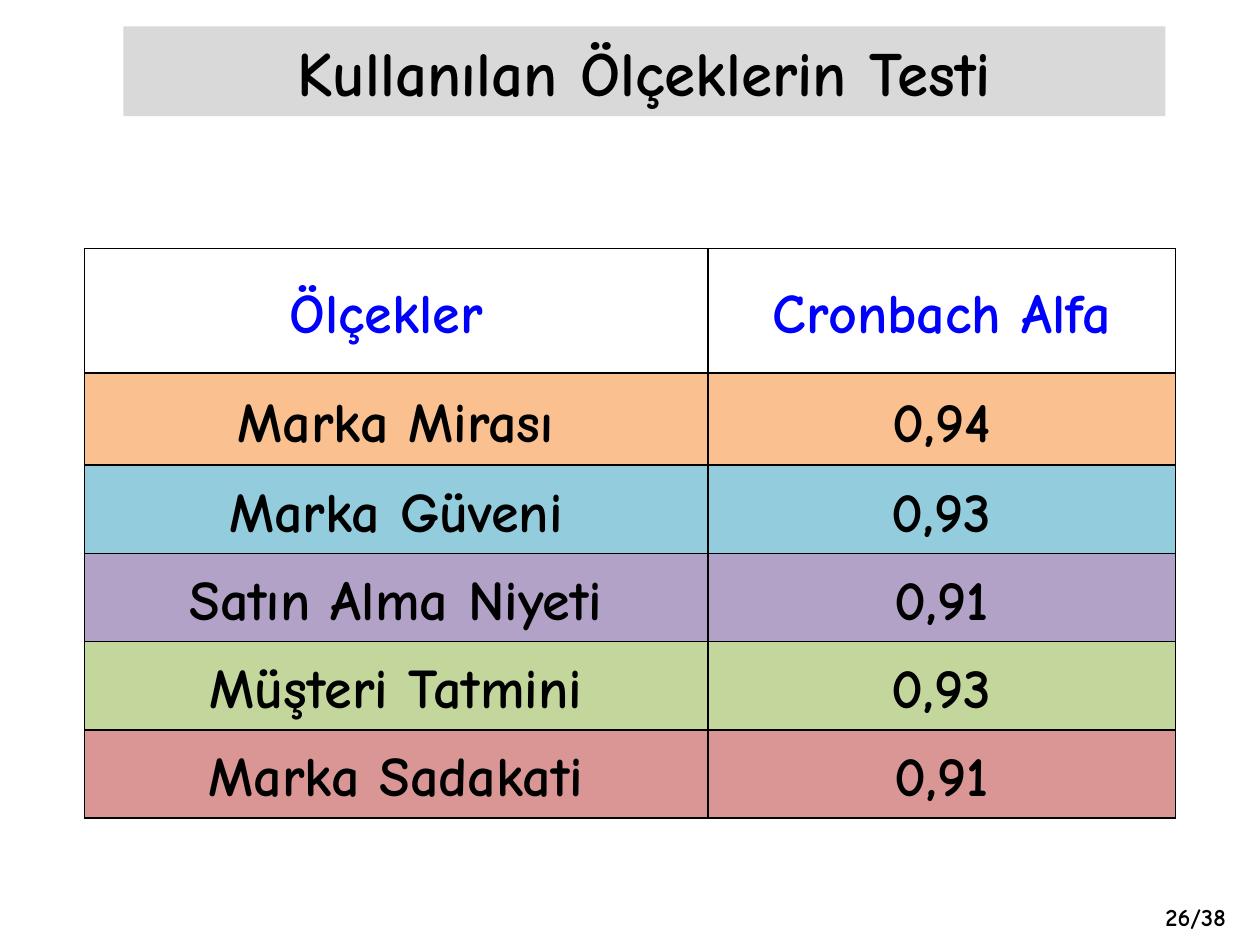
from pptx import Presentation
from pptx.dml.color import RGBColor
from pptx.enum.text import MSO_ANCHOR, MSO_AUTO_SIZE, PP_ALIGN
from pptx.oxml import parse_xml
from pptx.oxml.ns import nsdecls
from pptx.util import Inches, Pt

MIDDLE = MSO_ANCHOR.MIDDLE
CENTER = PP_ALIGN.CENTER
NO_FIT = MSO_AUTO_SIZE.NONE

THEME = {
    "font": "Comic Neue",
    "ink": "000000",
    "head": "0000FF",
    "paper": "FFFFFF",
    "band": "D9D9D9",
    "title": 36,
    "cell": 32,
    "page": 14,
}

ROWS = [
    ("Ölçekler ", "Cronbach Alfa", THEME["paper"]),
    ("Marka Mirası", "0,94", "FAC090"),
    ("Marka Güveni", "0,93", "93CDDD"),
    ("Satın Alma Niyeti", "0,91", "B3A2C7"),
    ("Müşteri Tatmini", "0,93", "C3D69B"),
    ("Marka Sadakati", "0,91", "D99694"),
]


def write(frame, text, size, color=THEME["ink"], lines=1.0):
    """Put one centred bold paragraph into a text frame."""
    para = frame.paragraphs[0]
    para.alignment = CENTER
    para.line_spacing = lines
    run = para.add_run()
    run.text = text
    run.font.name = THEME["font"]
    run.font.size = Pt(size)
    run.font.bold = True
    run.font.color.rgb = RGBColor.from_string(color)


def edge(cell):
    """Draw a thin line on all four sides of a cell."""
    props = cell._tc.get_or_add_tcPr()
    for spot, side in enumerate(("lnL", "lnR", "lnT", "lnB")):
        props.insert(spot, parse_xml(
            f'<a:{side} {nsdecls("a")} w="{Pt(1)}"><a:solidFill>'
            f'<a:srgbClr val="{THEME["ink"]}"/></a:solidFill></a:{side}>'))


deck = Presentation()
deck.slide_width, deck.slide_height = Inches(10), Inches(7.5)
wide, high = deck.slide_width, deck.slide_height
slide = deck.slides.add_slide(deck.slide_layouts[5])

# Title band
title = slide.shapes.title
title.left, title.top = int(wide * 0.098), int(high * 0.028)
title.width, title.height = int(wide * 0.827), int(high * 0.095)
title._element.spPr.append(parse_xml(
    f'<a:prstGeom {nsdecls("a")} prst="flowChartAlternateProcess">'
    '<a:avLst/></a:prstGeom>'))
title.fill.solid()
title.fill.fore_color.rgb = RGBColor.from_string(THEME["band"])
title.text_frame.auto_size = NO_FIT
title.text_frame.vertical_anchor = MIDDLE
write(title.text_frame, "Kullanılan Ölçeklerin Testi", THEME["title"])

# Table of scales: columns 4 to 3, a tall head row, then even rows
span = int(wide * 0.866)
tall = [Inches(0.99), Inches(0.73)] + [Inches(0.7)] * 4
table = slide.shapes.add_table(
    len(ROWS), 2, (wide - span) // 2, int(high * 0.263), span, sum(tall)).table
table.first_row = table.horz_banding = False
for col, share in zip(table.columns, (4, 3)):
    col.width = span * share // 7

for r, (*words, fill) in enumerate(ROWS):
    table.rows[r].height = tall[r]
    for c, word in enumerate(words):
        cell = table.cell(r, c)
        cell.margin_left = cell.margin_right = Inches(0.07)
        cell.margin_top = cell.margin_bottom = 0
        cell.vertical_anchor = MIDDLE
        cell.fill.solid()
        cell.fill.fore_color.rgb = RGBColor.from_string(fill)
        edge(cell)
        color = THEME["ink"] if r else THEME["head"]
        write(cell.text_frame, word, THEME["cell"], color=color, lines=1.15)

# Page number
page = slide.shapes.add_textbox(
    int(wide * 0.902), int(high * 0.948), int(wide * 0.094), int(high * 0.045))
page.text_frame.word_wrap = False
write(page.text_frame, "26/38", THEME["page"])

deck.save("out.pptx")
